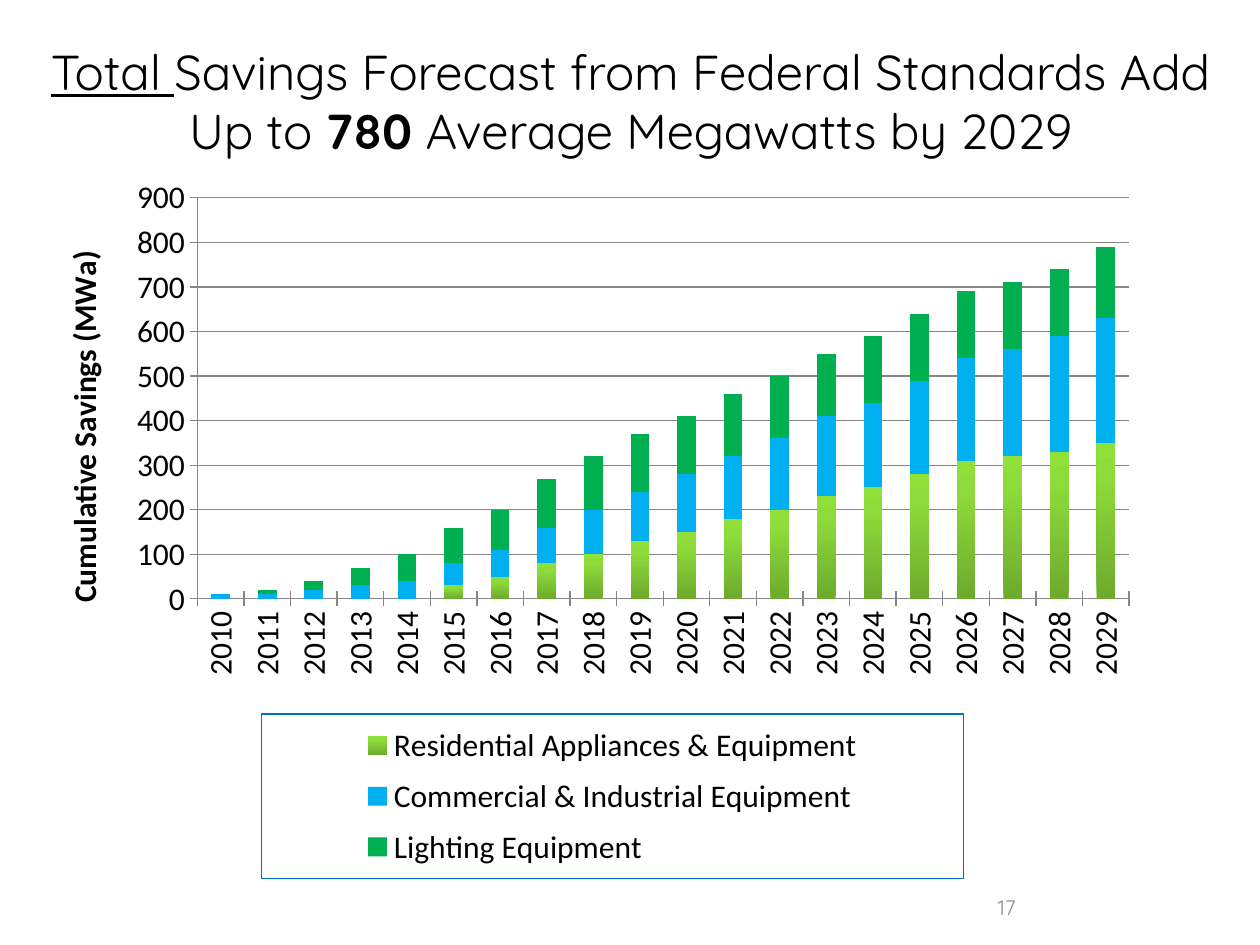
from copy import deepcopy

from lxml import etree
from pptx import Presentation
from pptx.chart.data import CategoryChartData
from pptx.dml.color import RGBColor
from pptx.enum.chart import XL_CHART_TYPE, XL_LEGEND_POSITION, XL_TICK_MARK
from pptx.enum.text import MSO_ANCHOR, PP_ALIGN
from pptx.oxml.ns import qn
from pptx.util import Inches, Pt

STACKED = XL_CHART_TYPE.COLUMN_STACKED
BOTTOM = XL_LEGEND_POSITION.BOTTOM
CROSS = XL_TICK_MARK.CROSS
MIDDLE = MSO_ANCHOR.MIDDLE
CENTER, RIGHT = PP_ALIGN.CENTER, PP_ALIGN.RIGHT

TEXT_FONT, CHART_FONT = "Quicksand", "Calibri"
BLACK, AXIS_GREY, NUMBER_GREY = "000000", "868686", "8C8C8C"
LEGEND_BLUE = "0070C0"

YEARS = [str(year) for year in range(2010, 2030)]
GREEN_STOPS = [(0, "6DAA2D"), (0.8, "8EDC3B"), (1, "8FE038")]
SAVINGS = [
    ("Residential Appliances & Equipment", GREEN_STOPS,
     [0, 0, 0, 0, 0, 30, 50, 80, 100, 130,
      150, 180, 200, 230, 250, 280, 310, 320, 330, 350]),
    ("Commercial & Industrial Equipment", "00B0F0",
     [10, 10, 20, 30, 40, 50, 60, 80, 100, 110,
      130, 140, 160, 180, 190, 210, 230, 240, 260, 280]),
    ("Lighting Equipment", "00B050",
     [0, 10, 20, 40, 60, 80, 90, 110, 120, 130,
      130, 140, 140, 140, 150, 150, 150, 150, 150, 160]),
]


def color(value):
    return RGBColor.from_string(value)


def style_font(font, size, name, value, bold=False):
    font.size = Pt(size)
    font.name = name
    font.bold = bold
    font.color.rgb = color(value)


def add_text(page, box, spans, size, value, align):
    frame = page.shapes.add_textbox(*map(Inches, box)).text_frame
    frame.word_wrap = True
    frame.vertical_anchor = MIDDLE
    para = frame.paragraphs[0]
    para.alignment = align
    for text, bold, underline in spans:
        span = para.add_run()
        span.text = text
        style_font(span.font, size, TEXT_FONT, value, bold)
        span.font.underline = underline


def add_title(page, box):
    spans = [
        ("Total ", False, True),
        ("Savings Forecast from Federal Standards Add Up to ", False, False),
        ("780", True, False),
        (" Average Megawatts by 2029", False, False),
    ]
    add_text(page, box, spans, size=28, value=BLACK, align=CENTER)


def add_page_number(page, box):
    add_text(page, box, [("17", False, False)], size=12, value=NUMBER_GREY, align=RIGHT)


def fill_gradient(fill, series, stops):
    fill.gradient()
    fill.gradient_angle = 90
    stop_list = next(series._element.iter(qn("a:gsLst")))
    stop_list.append(deepcopy(stop_list[-1]))
    for stop, (position, value) in zip(fill.gradient_stops, stops):
        stop.position = position
        stop.color.rgb = color(value)


def set_layout(parent, index, box, inner=False):
    for old in parent.findall(qn("c:layout")):
        parent.remove(old)
    layout = etree.Element(qn("c:layout"))
    manual = etree.SubElement(layout, qn("c:manualLayout"))
    settings = [("layoutTarget", "inner")] if inner else []
    settings += [("xMode", "edge"), ("yMode", "edge")]
    settings += zip("xywh", map(str, box))
    for tag, value in settings:
        etree.SubElement(manual, qn(f"c:{tag}")).set("val", value)
    parent.insert(index, layout)


def style_axis(axis):
    style_font(axis.tick_labels.font, 18, CHART_FONT, BLACK)
    axis.major_tick_mark = CROSS
    axis.format.line.color.rgb = color(AXIS_GREY)
    axis.format.line.width = Pt(0.75)


def style_value_axis(axis):
    style_axis(axis)
    axis.minimum_scale, axis.maximum_scale, axis.major_unit = 0, 900, 100
    axis.tick_labels.number_format = "0"
    axis.tick_labels.number_format_is_linked = False
    axis.has_major_gridlines = True
    axis.major_gridlines.format.line.color.rgb = color(AXIS_GREY)
    axis.major_gridlines.format.line.width = Pt(0.75)
    para = axis.axis_title.text_frame.paragraphs[0]
    span = para.add_run()
    span.text = "Cumulative Savings (MWa)"
    style_font(span.font, 18, CHART_FONT, BLACK, bold=True)


def style_legend(chart):
    chart.has_legend = True
    legend = chart.legend
    legend.position = BOTTOM
    legend.include_in_layout = False
    style_font(legend.font, 18, CHART_FONT, BLACK)
    set_layout(legend._element, 1, (0.185, 0.755, 0.6, 0.225))
    border = etree.Element(qn("c:spPr"))
    line = etree.SubElement(border, qn("a:ln"), w=str(Pt(0.75)))
    solid = etree.SubElement(line, qn("a:solidFill"))
    etree.SubElement(solid, qn("a:srgbClr"), val=LEGEND_BLUE)
    legend._element.find(qn("c:txPr")).addprevious(border)


def add_savings_chart(page, box):
    data = CategoryChartData(number_format="0")
    data.categories = YEARS
    for name, _, values in SAVINGS:
        data.add_series(name, values)
    chart = page.shapes.add_chart(STACKED, *map(Inches, box), data).chart
    chart.has_title = False
    style_font(chart.font, 18, CHART_FONT, BLACK)
    plot = chart.plots[0]
    plot.vary_by_categories = False
    plot.gap_width = 150
    plot.overlap = 100
    for series, (_, paint, _) in zip(plot.series, SAVINGS):
        fill = series.format.fill
        if isinstance(paint, list):
            fill_gradient(fill, series, paint)
        else:
            fill.solid()
            fill.fore_color.rgb = color(paint)
    style_axis(chart.category_axis)
    chart.category_axis.tick_labels.font._element.getparent().getparent().getparent().find(
        qn("a:bodyPr")).set("rot", "-5400000")
    style_value_axis(chart.value_axis)
    style_legend(chart)
    plot_area = next(chart._chartSpace.iter(qn("c:plotArea")))
    set_layout(plot_area, 0, (0.13, 0.05, 0.797, 0.548), inner=True)


def main():
    deck = Presentation()
    deck.slide_width, deck.slide_height = Inches(10), Inches(7.5)
    page = deck.slides.add_slide(deck.slide_layouts[6])
    add_title(page, (0.17, 0.17, 9.67, 1.25))
    add_savings_chart(page, (0.36, 1.28, 9.28, 5.81))
    add_page_number(page, (5.83, 7, 2.33, 0.4))
    deck.save("out.pptx")


if __name__ == "__main__":
    main()
